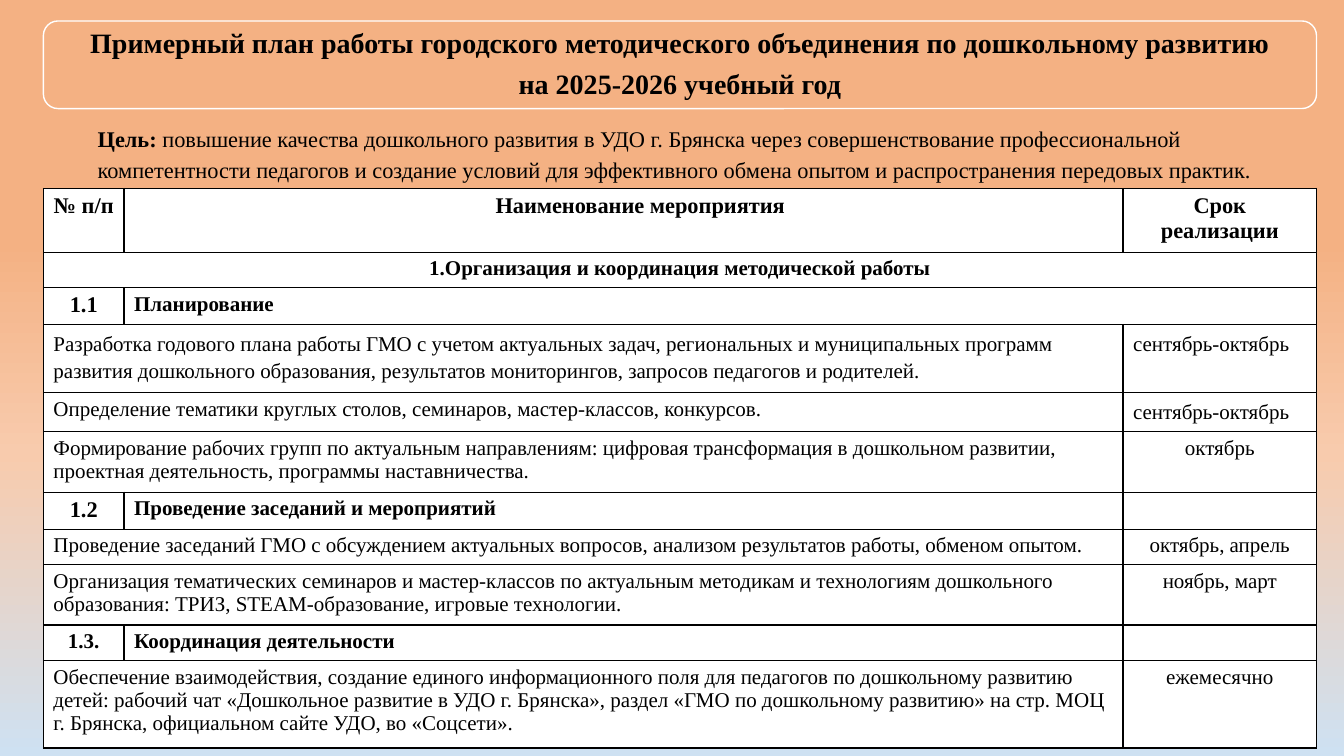
from copy import deepcopy
from dataclasses import dataclass

from lxml.etree import SubElement, fromstring
from pptx import Presentation
from pptx.dml.color import RGBColor
from pptx.enum.shapes import MSO_SHAPE
from pptx.enum.text import MSO_ANCHOR, MSO_AUTO_SIZE, PP_ALIGN
from pptx.oxml.ns import nsdecls, qn
from pptx.util import Pt


@dataclass(frozen=True)
class Theme:
    """Colours, font and type sizes of the slide."""
    font: str = "Times New Roman"
    ink: str = "000000"
    paper: str = "FFFFFF"
    card: str = "F4B183"
    sky: tuple = ((0.32, "F4B183"), (0.6, "F8CBAD"), (1, "CEE1F2"))
    title: int = 20
    head: int = 16
    cell: int = 15


THEME = Theme()
LEFT, WIDE = 31, 909.4
COLS = (57.6, 713.6, 138.2)
ROWS = (
    (44.6, "head", ("№ п/п", "Наименование мероприятия", "Срок реализации")),
    (24.5, "band", ("1.Организация и координация методической работы",)),
    (25.9, "wide", ("1.1", "Планирование")),
    (46.1, "loose", (
        "Разработка годового плана работы ГМО с учетом актуальных задач, региональных и "
        "муниципальных программ развития дошкольного образования, результатов мониторингов, "
        "запросов педагогов и родителей.", "сентябрь-октябрь")),
    (25.9, "mixed", (
        "Определение тематики круглых столов, семинаров, мастер-классов, конкурсов.",
        "сентябрь-октябрь")),
    (42.5, "task", (
        "Формирование рабочих групп по актуальным направлениям: цифровая трансформация в "
        "дошкольном развитии, проектная деятельность, программы наставничества.", "октябрь")),
    (25.9, "topic", ("1.2", "Проведение заседаний и мероприятий")),
    (24.5, "task", (
        "Проведение заседаний ГМО с обсуждением актуальных вопросов, анализом результатов "
        "работы, обменом опытом.", "октябрь, апрель")),
    (42.5, "task", (
        "Организация тематических семинаров и мастер-классов по актуальным методикам и "
        "технологиям дошкольного образования: ТРИЗ, STEAM-образование, игровые технологии.",
        "ноябрь, март")),
    (24.5, "small", ("1.3.", "Координация деятельности")),
    (62.6, "task", (
        "Обеспечение взаимодействия, создание единого информационного поля для педагогов по "
        "дошкольному развитию детей: рабочий чат «Дошкольное развитие в УДО г. Брянска», раздел "
        "«ГМО по дошкольному развитию» на стр. МОЦ г. Брянска, официальном сайте УДО, во "
        "«Соцсети».", "ежемесячно")),
)


def write(frame, text, lead="", size=THEME.cell, bold=False, align=PP_ALIGN.LEFT,
          space=1.0, after=0):
    """Write one paragraph per line of text, after an optional bold lead."""
    for i, line in enumerate(text.split("\n")):
        para = frame.add_paragraph() if i else frame.paragraphs[0]
        para.alignment, para.line_spacing = align, space
        para.space_before, para.space_after = Pt(0), Pt(after)
        for part, heavy in ((lead, True), (line, bold)):
            if part:
                run = para.add_run()
                run.text = part
                run.font.name, run.font.size = THEME.font, Pt(size)
                run.font.bold = heavy
                run.font.color.rgb = RGBColor.from_string(THEME.ink)


def place(shape, box):
    """Move a shape to a box given in points."""
    shape.left, shape.top, shape.width, shape.height = (Pt(n) for n in box)


def draw_sky(slide):
    """Fill the background with a three-stop vertical gradient."""
    fill = slide.background.fill
    fill.gradient()
    fill.gradient_angle = 270
    stops = next(slide.element.iter(qn("a:gsLst")))
    stops.append(deepcopy(stops[0]))
    for stop, (spot, tone) in zip(fill.gradient_stops, THEME.sky):
        stop.position = spot
        stop.color.rgb = RGBColor.from_string(tone)


def draw_title(slide, box):
    """Place the title on a rounded card."""
    left, top, wide, high = box
    card = slide.shapes.add_shape(MSO_SHAPE.ROUNDED_RECTANGLE, *(Pt(n) for n in box))
    card.shadow.inherit = False
    card.fill.solid()
    card.fill.fore_color.rgb = RGBColor.from_string(THEME.card)
    card.line.color.rgb = RGBColor.from_string(THEME.paper)
    card.line.width = Pt(1)
    title = slide.shapes.title
    title.element.addprevious(card.element)
    place(title, (left + 3, top + 3, wide - 6, high - 6))
    frame = title.text_frame
    frame.auto_size = MSO_AUTO_SIZE.NONE
    frame.vertical_anchor = MSO_ANCHOR.MIDDLE
    frame.margin_left = frame.margin_right = Pt(6)
    frame.margin_top = frame.margin_bottom = Pt(6)
    write(frame, "Примерный план работы городского методического объединения по дошкольному "
          "развитию\nна 2025-2026 учебный год", size=THEME.title, bold=True,
          align=PP_ALIGN.CENTER, space=0.9, after=8)


def draw_goal(slide, box):
    """Place the goal in the body placeholder without a bullet."""
    body = slide.placeholders[1]
    place(body, box)
    body.text_frame.auto_size = MSO_AUTO_SIZE.SHAPE_TO_FIT_TEXT
    write(body.text_frame, " повышение качества дошкольного развития в УДО г. Брянска через "
          "совершенствование профессиональной компетентности педагогов и создание условий для "
          "эффективного обмена опытом и распространения передовых практик.",
          lead="Цель:", size=THEME.head, space=1.15, after=10)
    for props in body.element.iter(qn("a:pPr")):
        props.set("marL", "0")
        props.set("indent", "0")
        SubElement(props, qn("a:buNone"))


def fill_row(cells, kind, texts):
    """Merge and write the cells of one row by its kind."""
    mid = PP_ALIGN.CENTER
    airy = {"space": 1.15, "after": 10}
    if kind == "head":
        for cell, text in zip(cells, texts):
            write(cell.text_frame, text, size=THEME.head, bold=True, align=mid)
        cells[1].margin_left = Pt(31)
    elif kind == "band":
        cells[0].merge(cells[2])
        write(cells[0].text_frame, texts[0], bold=True, align=mid)
    elif kind in ("wide", "topic", "small"):
        if kind == "wide":
            cells[1].merge(cells[2])
        size = THEME.cell if kind == "small" else THEME.head
        write(cells[0].text_frame, texts[0], size=size, bold=True, align=mid)
        write(cells[1].text_frame, texts[1], bold=True)
    else:
        cells[0].merge(cells[1])
        write(cells[0].text_frame, texts[0], **(airy if kind == "loose" else {}))
        write(cells[2].text_frame, texts[1], **({"align": mid} if kind == "task" else airy))


def draw_plan(slide, left, top):
    """Place the plan table with thin borders on white cells."""
    high = sum(row[0] for row in ROWS)
    frame = slide.shapes.add_table(len(ROWS), len(COLS), Pt(left), Pt(top), Pt(WIDE), Pt(high))
    table = frame.table
    table.first_row = table.horz_banding = False
    for col, wide in zip(table.columns, COLS):
        col.width = Pt(wide)
    for row, (tall, kind, texts) in zip(table.rows, ROWS):
        row.height = Pt(tall)
        cells = list(row.cells)
        for cell in cells:
            cell.fill.solid()
            cell.fill.fore_color.rgb = RGBColor.from_string(THEME.paper)
        fill_row(cells, kind, texts)
    for props in frame.element.iter(qn("a:tcPr")):
        for i, side in enumerate("LRTB"):
            props.insert(i, fromstring(
                f'<a:ln{side} {nsdecls("a")} w="{Pt(1)}"><a:solidFill>'
                f'<a:srgbClr val="{THEME.ink}"/></a:solidFill></a:ln{side}>'))
    for para in frame.element.iter(qn("a:p")):
        if para.find(qn("a:r")) is None:
            SubElement(para, qn("a:endParaRPr")).set("sz", str(THEME.cell * 100))


def main():
    """Build the slide and save it."""
    deck = Presentation()
    deck.slide_width, deck.slide_height = Pt(960), Pt(540)
    slide = deck.slides.add_slide(deck.slide_layouts[1])
    draw_sky(slide)
    draw_title(slide, (LEFT, 15, WIDE, 62.6))
    draw_goal(slide, (62.6, 82.8, 860.4, 51.8))
    draw_plan(slide, LEFT, 134.6)
    deck.save("out.pptx")


if __name__ == "__main__":
    main()
